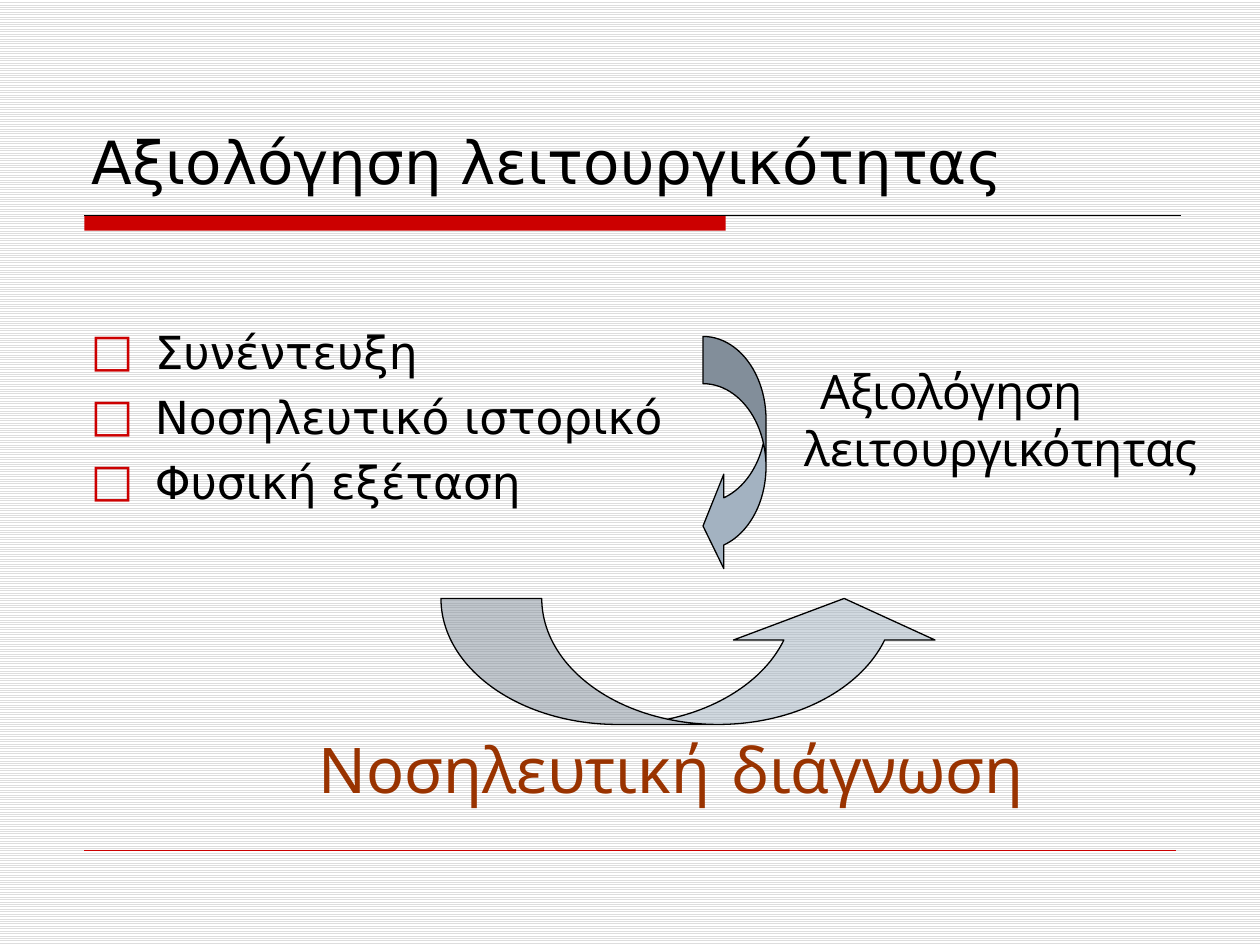
"""Build the slide on assessing function and nursing diagnosis."""
from dataclasses import dataclass

from lxml import etree
from pptx import Presentation, util as u
from pptx.dml.color import RGBColor
from pptx.enum import dml, shapes, text
from pptx.oxml.ns import qn

PX = 9144


@dataclass(frozen=True)
class Theme:
    ink: str = "000000"
    red: str = "CC0000"
    rust: str = "993300"
    steel: str = "A3B2C1"
    stripe: str = "DDDDDD"
    paper: str = "FFFFFF"
    sans: str = "DejaVu Sans"
    comic: str = "Comic Neue"
    head: int = 34
    body: int = 26
    note: int = 27
    close: int = 36


T = Theme()


def px(*nums):
    return [u.Emu(n * PX) for n in nums]


def rgb(code):
    return RGBColor.from_string(code)


def style(para, face, size, color=T.ink):
    para.font.name = face
    para.font.size = u.Pt(size)
    para.font.color.rgb = rgb(color)


def paint(slide):
    fill = slide.background.fill
    fill.patterned()
    fill.pattern = dml.MSO_PATTERN.LIGHT_HORIZONTAL
    fill.fore_color.rgb = rgb(T.stripe)
    fill.back_color.rgb = rgb(T.paper)


def title(slide, words, box):
    head = slide.shapes.title
    head.left, head.top, head.width, head.height = px(*box)
    frame = head.text_frame
    frame.text = words
    frame.vertical_anchor = text.MSO_ANCHOR.BOTTOM
    para = frame.paragraphs[0]
    para.alignment = text.PP_ALIGN.LEFT
    style(para, T.sans, T.head)


def rule(slide, ends, color, width):
    line = slide.shapes.add_connector(shapes.MSO_CONNECTOR.STRAIGHT, *px(*ends))
    line.line.color.rgb = rgb(color)
    line.line.width = u.Pt(width)
    etree.SubElement(line._element.spPr, qn("a:effectLst"))


def solid(slide, kind, box, color):
    shape = slide.shapes.add_shape(kind, *px(*box))
    shape.shadow.inherit = False
    shape.fill.solid()
    shape.fill.fore_color.rgb = rgb(color)
    shape.line.fill.background()
    return shape


def arrow(slide, kind, box, adjs, alpha=None):
    shape = solid(slide, kind, box, T.steel)
    shape.line.color.rgb = rgb(T.ink)
    shape.line.width = u.Pt(0.75)
    for i, value in enumerate(adjs):
        shape.adjustments[i] = value
    if alpha:
        tone = shape._element.spPr.find(qn("a:solidFill"))[0]
        etree.SubElement(tone, qn("a:alpha"), val=str(alpha * 1000))


def label(slide, lines, box, face, size, color=T.ink):
    frame = slide.shapes.add_textbox(*px(*box)).text_frame
    frame.word_wrap = True
    frame.text = "\n".join(lines)
    for para in frame.paragraphs:
        style(para, face, size, color)
    return frame.paragraphs


def indent(para, left, first=0):
    props = para._p.get_or_add_pPr()
    props.set("marL", str(left * PX))
    props.set("indent", str(first * PX))
    return props


def bullet(para):
    para.space_before = u.Pt(6)
    props = indent(para, 51, -51)
    tone = etree.SubElement(props, qn("a:buClr"))
    etree.SubElement(tone, qn("a:srgbClr"), val=T.red)
    etree.SubElement(props, qn("a:buFont"), typeface=T.sans)
    etree.SubElement(props, qn("a:buChar"), char="□")


def main():
    deck = Presentation()
    deck.slide_width, deck.slide_height = px(1000, 750)
    slide = deck.slides.add_slide(deck.slide_layouts[5])
    paint(slide)
    solid(slide, shapes.MSO_SHAPE.RECTANGLE, (67, 171, 509, 12), T.red)
    rule(slide, (67, 171, 937, 171), T.ink, 0.75)
    rule(slide, (67, 675, 933, 675), T.red, 0.25)
    title(slide, "Αξιολόγηση λειτουργικότητας", (63, 39, 875, 122))

    steps = ["Συνέντευξη", "Νοσηλευτικό ιστορικό", "Φυσική εξέταση"]
    for para in label(slide, steps, (62, 252, 875, 406), T.sans, T.body):
        bullet(para)

    arrow(slide, shapes.MSO_SHAPE.CURVED_LEFT_ARROW, (558, 267, 50, 188),
          (0.75, 1.5, 0.33))
    goal = label(slide, ["Αξιολόγηση", "λειτουργικότητας"],
                 (617, 283, 350, 100), T.comic, T.note)
    for para, left in zip(goal, (24, 12)):
        indent(para, left)

    arrow(slide, shapes.MSO_SHAPE.CURVED_UP_ARROW, (350, 475, 400, 100),
          (0.8, 1.6, 0.33), alpha=50)
    end = label(slide, ["Νοσηλευτική διάγνωση"], (158, 575, 750, 70),
                T.comic, T.close, T.rust)
    end[0].alignment = text.PP_ALIGN.CENTER
    deck.save("out.pptx")


if __name__ == "__main__":
    main()
